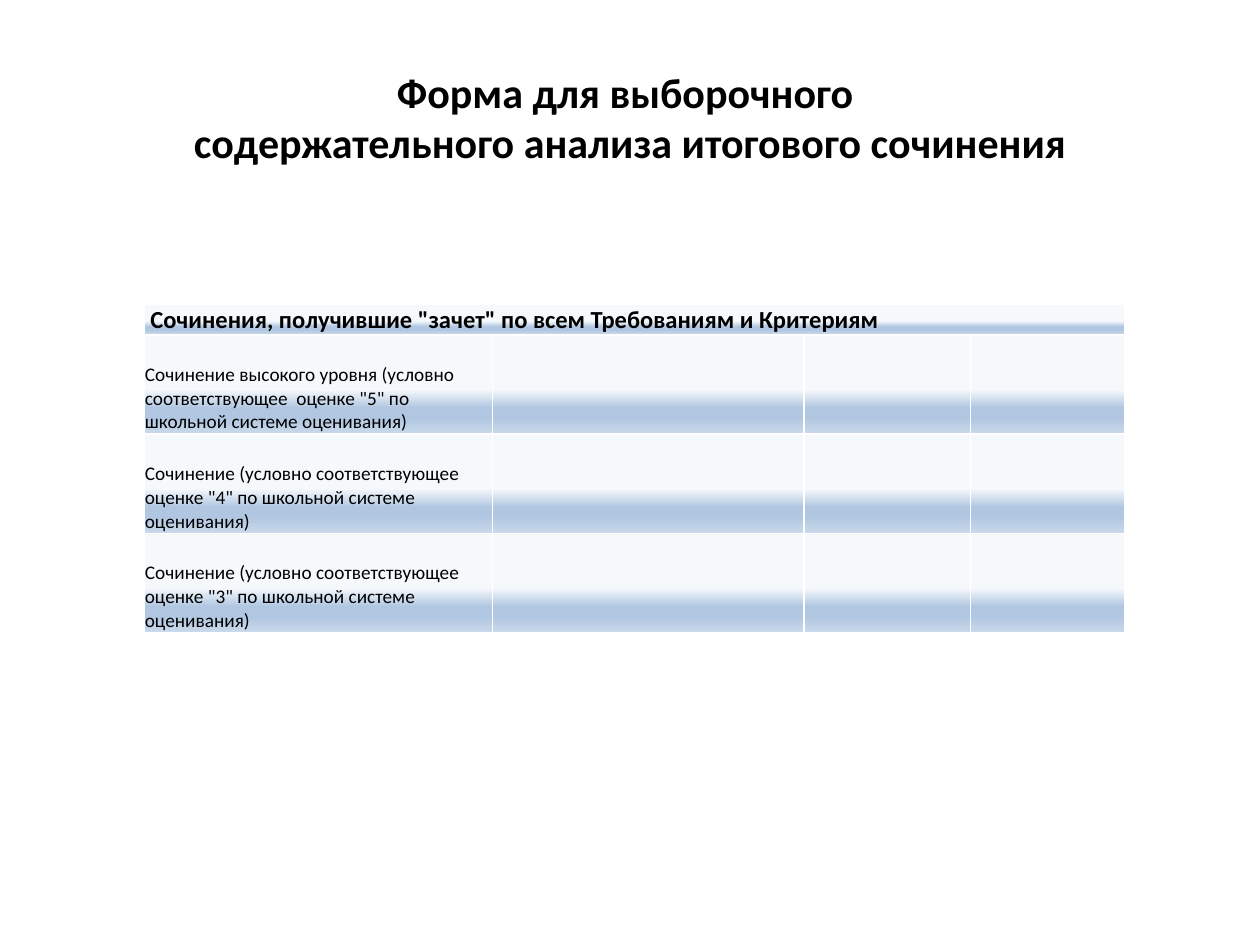
import pptx
import pptx.dml.color
import pptx.enum.text
import pptx.oxml
import pptx.oxml.ns
import pptx.util
from pptx.util import Cm

BLACK = pptx.dml.color.RGBColor(0, 0, 0)
WHITE = pptx.dml.color.RGBColor(0xFF, 0xFF, 0xFF)
PALE = pptx.dml.color.RGBColor(0xF6, 0xF9, 0xFC)
BLUE = pptx.dml.color.RGBColor(0xB0, 0xC6, 0xE1)
LIGHT_BLUE = pptx.dml.color.RGBColor(0xCA, 0xD9, 0xEB)
GRADIENT = [(55, PALE), (74, BLUE), (83, BLUE), (100, LIGHT_BLUE)]


def write(frame, *lines, size, bold=False, align=pptx.enum.text.PP_ALIGN.LEFT):
    """Fill a frame with one paragraph whose lines are parted by line breaks."""
    paragraph = frame.paragraphs[0]
    paragraph.alignment = align
    for number, line in enumerate(lines):
        if number:
            paragraph.add_line_break()
        run = paragraph.add_run()
        run.text = line
        run.font.name = "Calibri"
        run.font.size = pptx.util.Pt(size)
        run.font.bold = bold
        run.font.color.rgb = BLACK


def style_cell(cell):
    """Give a cell narrow margins, white borders and the vertical gradient."""
    cell.vertical_anchor = pptx.enum.text.MSO_ANCHOR.BOTTOM
    cell.margin_left = cell.margin_right = cell.margin_top = Cm(0.02)
    cell.margin_bottom = 0
    namespace = pptx.oxml.ns.nsdecls("a")
    properties = cell._tc.get_or_add_tcPr()
    for side in "LRTB":
        properties.append(pptx.oxml.parse_xml(
            f'<a:ln{side} {namespace} w="12700"><a:solidFill>'
            f'<a:srgbClr val="{WHITE}"/></a:solidFill></a:ln{side}>'))
    stops = "".join(
        f'<a:gs pos="{percent * 1000}"><a:srgbClr val="{color}"/></a:gs>'
        for percent, color in GRADIENT)
    properties.append(pptx.oxml.parse_xml(
        f'<a:gradFill {namespace}><a:gsLst>{stops}</a:gsLst>'
        f'<a:lin ang="5400000" scaled="0"/></a:gradFill>'))


presentation = pptx.Presentation()
presentation.slide_width = Cm(25.4)
presentation.slide_height = Cm(19.05)
slide = presentation.slides.add_slide(presentation.slide_layouts[5])

title = slide.shapes.title
title.left, title.top, title.width, title.height = Cm(1.27), Cm(0.76), Cm(22.86), Cm(3.18)
title.text_frame.vertical_anchor = pptx.enum.text.MSO_ANCHOR.MIDDLE
write(title.text_frame, "Форма для выборочного ",
      "содержательного анализа итогового сочинения", size=24, bold=True,
      align=pptx.enum.text.PP_ALIGN.CENTER)

column_widths = [7.03, 6.28, 3.35, 3.12]
row_heights = [0.6, 2, 2, 2]
levels = [
    'Сочинение высокого уровня (условно соответствующее  оценке "5" по школьной системе оценивания)',
    'Сочинение (условно соответствующее  оценке "4" по школьной системе оценивания)',
    'Сочинение (условно соответствующее  оценке "3" по школьной системе оценивания)',
]
analysis = slide.shapes.add_table(
    len(row_heights), len(column_widths), Cm(2.9), Cm(6.13),
    Cm(sum(column_widths)), Cm(sum(row_heights))).table
for column, width in zip(analysis.columns, column_widths):
    column.width = Cm(width)
for row, height in zip(analysis.rows, row_heights):
    row.height = Cm(height)
for cell in analysis.iter_cells():
    style_cell(cell)

heading = analysis.cell(0, 0)
heading.merge(analysis.cell(0, len(column_widths) - 1))
heading.margin_left = Cm(0.13)
write(heading.text_frame, 'Сочинения, получившие "зачет" по всем Требованиям и Критериям',
      size=14, bold=True)
for number, level in enumerate(levels, start=1):
    write(analysis.cell(number, 0).text_frame, level, size=11)

presentation.save("out.pptx")
